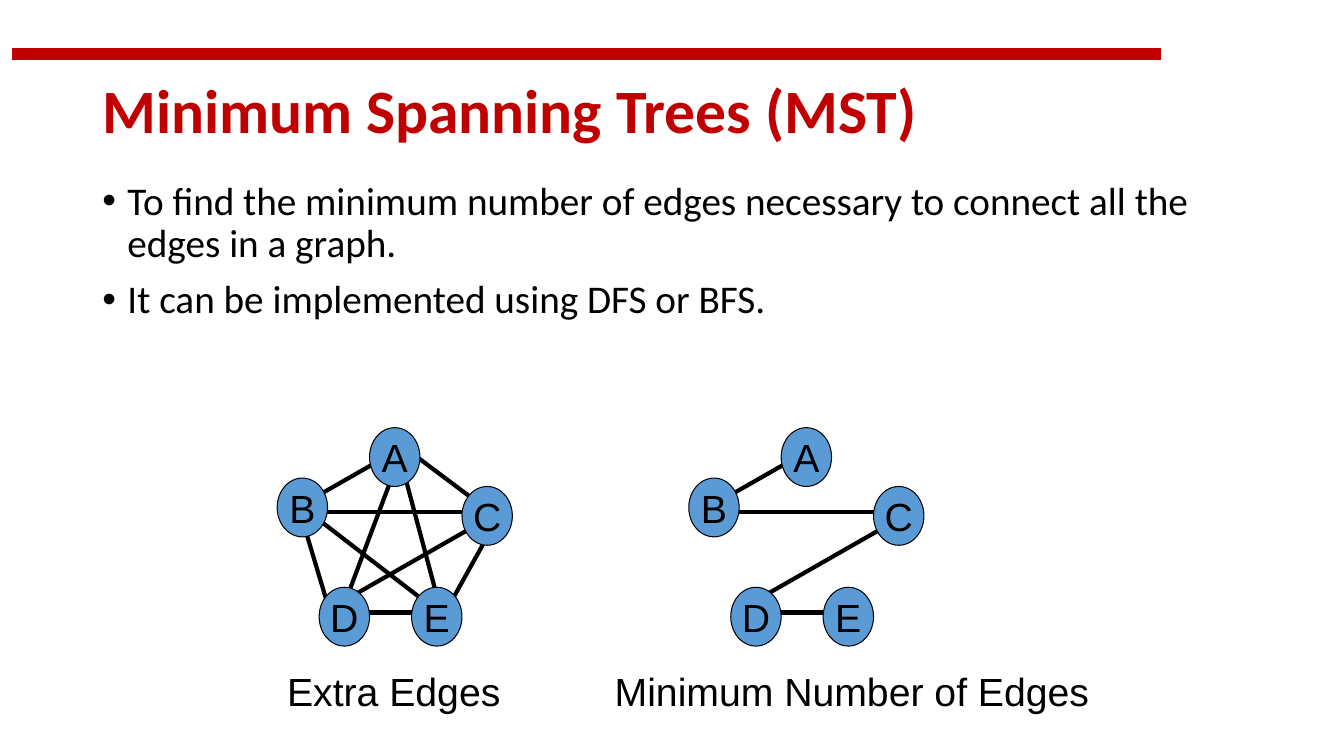
"""Build a slide that contrasts a full graph with its minimum spanning tree."""
from dataclasses import dataclass

from lxml.etree import SubElement
from pptx import Presentation
from pptx.dml.color import RGBColor
from pptx.enum.shapes import MSO_CONNECTOR, MSO_SHAPE
from pptx.enum.text import MSO_ANCHOR, MSO_AUTO_SIZE, PP_ALIGN
from pptx.oxml.ns import qn
from pptx.shapes.autoshape import Shape
from pptx.slide import Slide
from pptx.text.text import TextFrame, _Paragraph
from pptx.util import Pt

RED = RGBColor(0xC0, 0x00, 0x00)
BLUE = RGBColor(0x5B, 0x9B, 0xD5)
BLACK = RGBColor(0x00, 0x00, 0x00)

NODE_WIDTH, NODE_HEIGHT = 36, 42
GRAPH_TOP = 305.5
LABEL_TOP = 473

NODES = {"A": (66, 0), "C": (132, 42), "D": (30, 114), "E": (96, 114), "B": (0, 36)}
EDGES = {
    "AB": (30, 48, 72, 24),
    "AC": (96, 18, 144, 54),
    "CE": (150, 78, 120, 132),
    "DE": (102, 132, 54, 132),
    "BD": (36, 126, 18, 66),
    "AD": (84, 30, 48, 126),
    "AE": (90, 30, 114, 120),
    "BC": (30, 60, 138, 60),
    "CD": (54, 120, 138, 72),
    "BE": (30, 66, 108, 126),
}
POINTS = [
    "To find the minimum number of edges necessary to connect all the edges in a graph.",
    "It can be implemented using DFS or BFS.",
]


@dataclass
class Graph:
    left: float
    edges: list[str]
    label: str
    label_left: float
    label_width: float


GRAPHS = [
    Graph(198, list(EDGES), "Extra Edges", 198, 167),
    Graph(492, ["AB", "DE", "BC", "CD"], "Minimum Number of Edges", 432, 354),
]


def style(line: _Paragraph, font: str, size: float, color: RGBColor = BLACK,
          bold: bool = False) -> None:
    for run in line.runs:
        run.font.name = font
        run.font.size = Pt(size)
        run.font.color.rgb = color
        run.font.bold = bold


def add_box(slide: Slide, left: float, top: float, width: float, height: float) -> TextFrame:
    box = slide.shapes.add_textbox(Pt(left), Pt(top), Pt(width), Pt(height))
    box.text_frame.word_wrap = True
    return box.text_frame


def add_form(slide: Slide, kind: MSO_SHAPE, left: float, top: float, width: float,
             height: float, fill: RGBColor, line: RGBColor, weight: float) -> Shape:
    form = slide.shapes.add_shape(kind, Pt(left), Pt(top), Pt(width), Pt(height))
    form.shadow.inherit = False
    form.fill.solid()
    form.fill.fore_color.rgb = fill
    form.line.color.rgb = line
    form.line.width = Pt(weight)
    return form


def add_title(slide: Slide) -> None:
    frame = add_box(slide, 66, 29, 828, 104.4)
    frame.vertical_anchor = MSO_ANCHOR.MIDDLE
    frame.text = "Minimum Spanning Trees (MST)"
    frame.paragraphs[0].line_spacing = 0.9
    style(frame.paragraphs[0], "Calibri", 44, RED, True)


def add_points(slide: Slide) -> None:
    frame = add_box(slide, 66, 126, 828, 364)
    for index, text in enumerate(POINTS):
        line = frame.add_paragraph() if index else frame.paragraphs[0]
        line.text = text
        props = line._p.get_or_add_pPr()
        props.set("marL", str(Pt(18)))
        props.set("indent", str(-Pt(18)))
        SubElement(props, qn("a:buFont")).set("typeface", "Arial")
        SubElement(props, qn("a:buChar")).set("char", "•")
        line.line_spacing = 0.9
        if index:
            line.space_before = Pt(10)
        style(line, "Calibri", 28)


def add_edge(slide: Slide, left: float, name: str) -> None:
    x1, y1, x2, y2 = EDGES[name]
    edge = slide.shapes.add_connector(
        MSO_CONNECTOR.STRAIGHT,
        Pt(left + x1), Pt(GRAPH_TOP + y1), Pt(left + x2), Pt(GRAPH_TOP + y2))
    edge.line.color.rgb = BLACK
    edge.line.width = Pt(3)
    SubElement(edge._element.spPr, qn("a:effectLst"))


def add_node(slide: Slide, left: float, name: str) -> None:
    x, y = NODES[name]
    node = add_form(slide, MSO_SHAPE.OVAL, left + x, GRAPH_TOP + y,
                    NODE_WIDTH, NODE_HEIGHT, BLUE, BLACK, 0.75)
    frame = node.text_frame
    frame.word_wrap = False
    frame.vertical_anchor = MSO_ANCHOR.MIDDLE
    frame.text = name
    frame.paragraphs[0].alignment = PP_ALIGN.CENTER
    style(frame.paragraphs[0], "Arial", 28)


def add_graph(slide: Slide, graph: Graph) -> None:
    for name in graph.edges:
        add_edge(slide, graph.left, name)
    for name in NODES:
        add_node(slide, graph.left, name)
    frame = add_box(slide, graph.label_left, LABEL_TOP, graph.label_width, 41)
    frame.word_wrap = False
    frame.auto_size = MSO_AUTO_SIZE.SHAPE_TO_FIT_TEXT
    frame.text = graph.label
    style(frame.paragraphs[0], "Arial", 28)


def main() -> None:
    deck = Presentation()
    deck.slide_width, deck.slide_height = Pt(960), Pt(540)
    slide = deck.slides.add_slide(deck.slide_layouts[6])
    add_form(slide, MSO_SHAPE.RECTANGLE, 8.8, 34.8, 820, 7.8, RED, RED, 1)
    add_title(slide)
    add_points(slide)
    for graph in GRAPHS:
        add_graph(slide, graph)
    deck.save("out.pptx")


if __name__ == "__main__":
    main()
